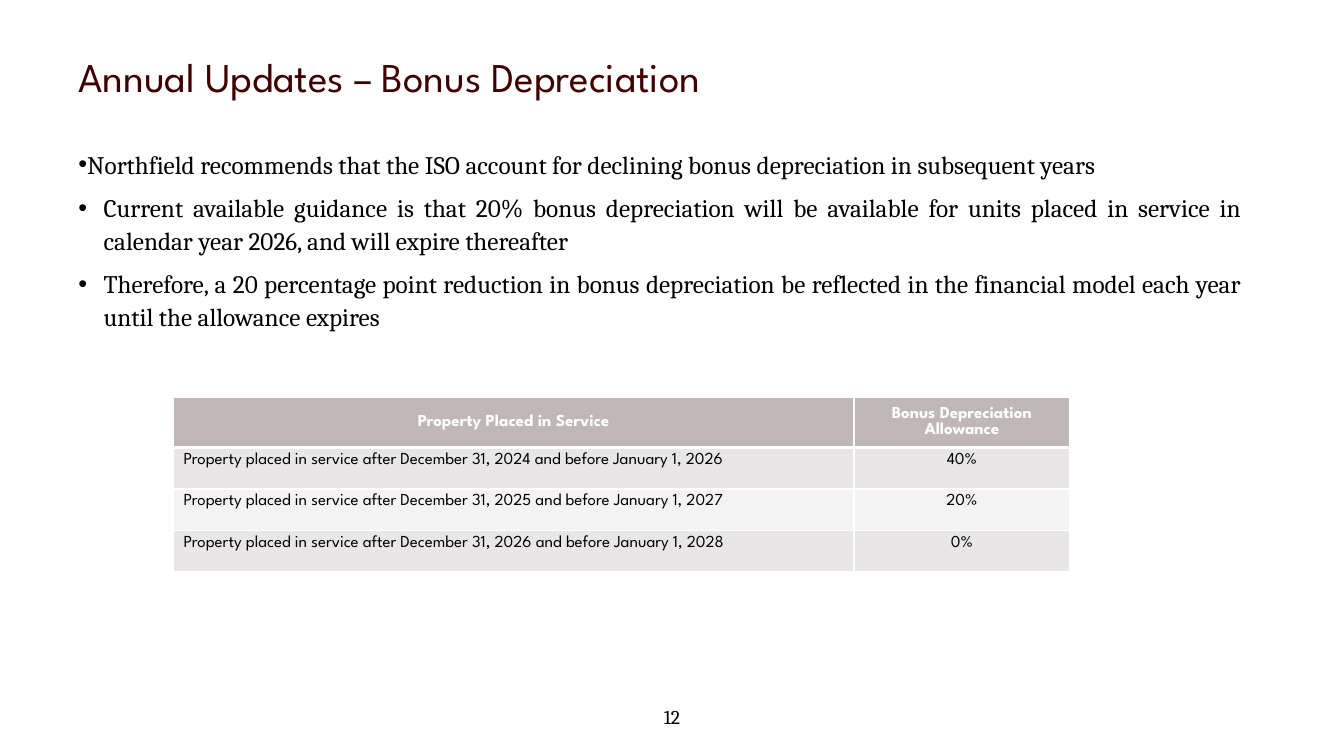
"""Build the bonus depreciation slide."""
import pptx
import pptx.dml.color
import pptx.enum.text
import pptx.oxml
import pptx.oxml.ns
import pptx.util
from pptx.util import Inches

TITLE = "Annual Updates – Bonus Depreciation"
PAGE_NUMBER = "12"
RECOMMENDATIONS = [
    (0, "Northfield recommends that the ISO account for declining bonus depreciation in subsequent years"),
    (0.25, "Current available guidance is that 20% bonus depreciation will be available for units "
           "placed in service in calendar year 2026, and will expire thereafter"),
    (0.25, "Therefore, a 20 percentage point reduction in bonus depreciation be reflected in the "
           "financial model each year until the allowance expires"),
]
ALLOWANCES = [
    ("Property Placed in Service", "Bonus Depreciation Allowance"),
    ("Property placed in service after December 31, 2024 and before January 1, 2026", "40%"),
    ("Property placed in service after December 31, 2025 and before January 1, 2027", "20%"),
    ("Property placed in service after December 31, 2026 and before January 1, 2028", "0%"),
]
COLUMN_WIDTHS = [6.75, 2.14]
ROW_HEIGHT = 0.41
HEADING, BODY = "League Spartan", "Cambria"
MAROON, BLACK, WHITE = "400000", "000000", "FFFFFF"
HEADER_FILL, ROW_FILLS = "BFB8B7", ["E8E6E6", "F4F3F3"]
ALIGN, ANCHOR = pptx.enum.text.PP_ALIGN, pptx.enum.text.MSO_ANCHOR


def color(hex_code):
    return pptx.dml.color.RGBColor.from_string(hex_code)


def write(paragraph, text, size, face, ink, align, bold=False):
    paragraph.alignment = align
    run = paragraph.add_run()
    run.text = text
    run.font.size = pptx.util.Pt(size)
    run.font.name = face
    run.font.bold = bold
    run.font.color.rgb = color(ink)


def add_frame(slide, left, top, width, height):
    frame = slide.shapes.add_textbox(*map(Inches, (left, top, width, height))).text_frame
    frame.word_wrap = True
    return frame


def add_bullet(paragraph, indent):
    properties = paragraph._p.get_or_add_pPr()
    properties.set("marL", str(Inches(indent)))
    properties.set("indent", str(Inches(-0.25)))
    for markup in ('<a:buFont %s typeface="Arial"/>', '<a:buChar %s char="•"/>'):
        properties.append(pptx.oxml.parse_xml(markup % pptx.oxml.ns.nsdecls("a")))


def add_borders(cell, widths):
    properties = cell._tc.get_or_add_tcPr()
    for side, width in widths.items():
        properties.append(pptx.oxml.parse_xml(
            f'<a:ln{side} {pptx.oxml.ns.nsdecls("a")} w="{pptx.util.Pt(width)}">'
            f'<a:solidFill><a:srgbClr val="{WHITE}"/></a:solidFill></a:ln{side}>'))


def add_title(slide):
    title = slide.shapes.title
    title.left, title.top, title.width, title.height = map(Inches, (0.68, 0.36, 11.5, 1.09))
    frame = title.text_frame
    frame.word_wrap = True
    frame.vertical_anchor = ANCHOR.TOP
    frame.margin_top = Inches(0.21)
    heading = frame.paragraphs[0]
    heading.line_spacing = 0.9
    write(heading, TITLE, 29.2, HEADING, MAROON, ALIGN.LEFT)


def add_recommendations(slide):
    frame = add_frame(slide, 0.68, 1.41, 11.73, 2.2)
    for index, (indent, text) in enumerate(RECOMMENDATIONS):
        paragraph = frame.add_paragraph() if index else frame.paragraphs[0]
        add_bullet(paragraph, indent)
        paragraph.line_spacing = 1.07
        paragraph.space_after = pptx.util.Pt(8)
        write(paragraph, text, 18, BODY, BLACK, ALIGN.JUSTIFY)


def add_allowances(slide):
    size = (sum(COLUMN_WIDTHS), ROW_HEIGHT * len(ALLOWANCES))
    table = slide.shapes.add_table(
        len(ALLOWANCES), len(COLUMN_WIDTHS), *map(Inches, (1.72, 3.94, *size))).table
    for column, width in zip(table.columns, COLUMN_WIDTHS):
        column.width = Inches(width)
    for r, values in enumerate(ALLOWANCES):
        table.rows[r].height = Inches(ROW_HEIGHT)
        header = r == 0
        for c, text in enumerate(values):
            cell = table.cell(r, c)
            add_borders(cell, {"L": 1, "R": 1, "T": 3 if r == 1 else 1, "B": 3 if header else 1})
            cell.fill.solid()
            cell.fill.fore_color.rgb = color(HEADER_FILL if header else ROW_FILLS[(r - 1) % 2])
            cell.vertical_anchor = ANCHOR.MIDDLE if header else ANCHOR.TOP
            write(cell.text_frame.paragraphs[0], text, 12, HEADING, WHITE if header else BLACK,
                  ALIGN.CENTER if header or c else ALIGN.LEFT, header)


def add_page_number(slide):
    number = add_frame(slide, 5.34, 6.97, 2.65, 0.43).paragraphs[0]
    number.line_spacing = 0.9
    write(number, PAGE_NUMBER, 14, BODY, BLACK, ALIGN.CENTER)


def main():
    deck = pptx.Presentation()
    deck.slide_width, deck.slide_height = Inches(13.33), Inches(7.5)
    slide = deck.slides.add_slide(deck.slide_layouts[5])
    add_page_number(slide)
    add_recommendations(slide)
    add_title(slide)
    add_allowances(slide)
    deck.save("out.pptx")


if __name__ == "__main__":
    main()
